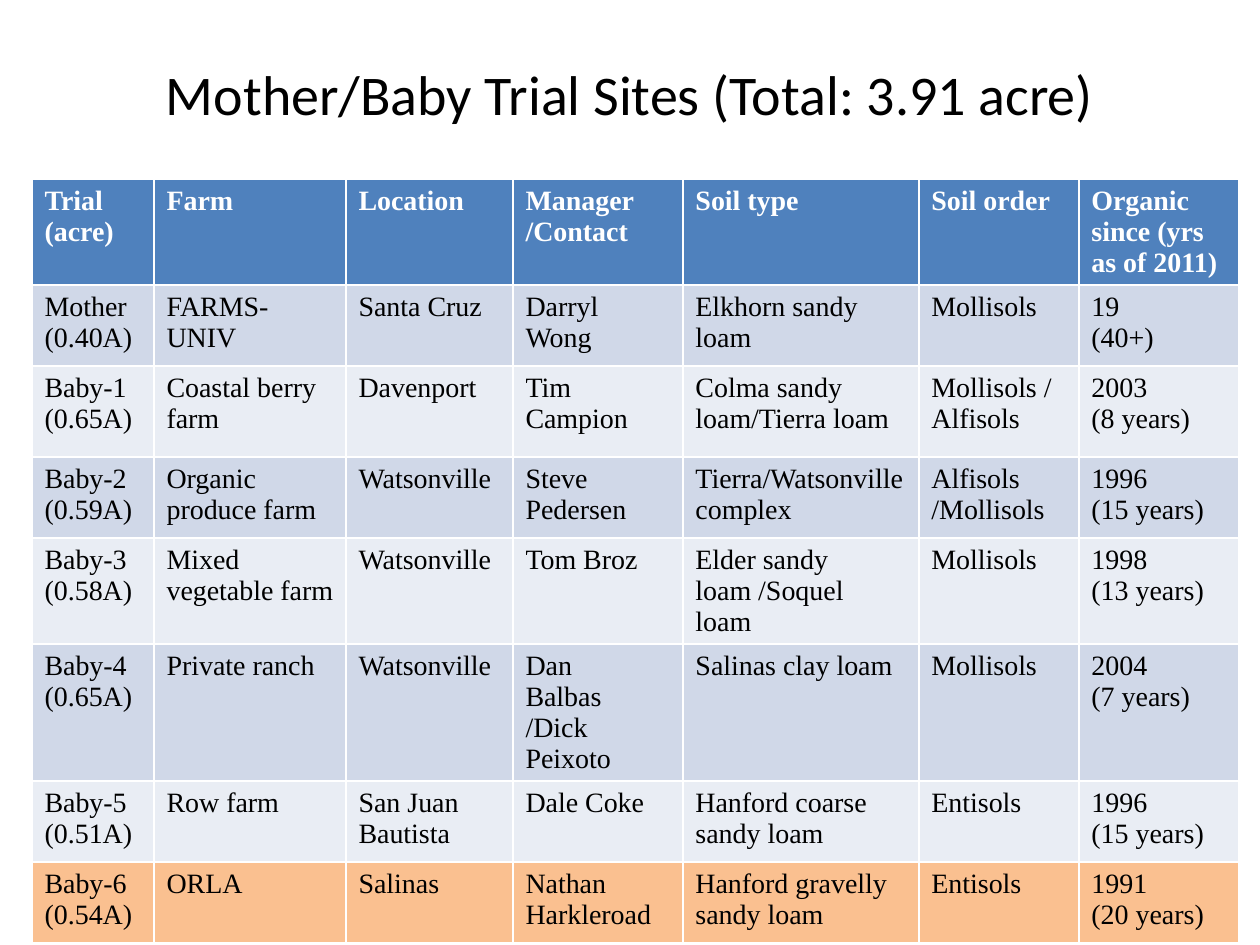
from pptx import Presentation
from pptx.dml.color import RGBColor
from pptx.enum.text import MSO_ANCHOR, MSO_AUTO_SIZE, PP_ALIGN
from pptx.util import Pt

MIDDLE = MSO_ANCHOR.MIDDLE
CENTER = PP_ALIGN.CENTER
FIXED = MSO_AUTO_SIZE.NONE

TITLE = "Mother/Baby Trial Sites (Total: 3.91 acre)"
HEAD = ["Trial\n(acre)", "Farm", "Location", "Manager /Contact", "Soil type",
        "Soil order", "Organic since (yrs as of 2011)"]
SITES = [
    ["Mother\n(0.40A)", "FARMS-UNIV", "Santa Cruz", "Darryl Wong",
     "Elkhorn sandy loam", "Mollisols", "19\n(40+)"],
    ["Baby-1\n(0.65A)", "Coastal berry farm", "Davenport", "Tim Campion",
     "Colma sandy loam/Tierra loam", "Mollisols /Alfisols", "2003\n(8 years)"],
    ["Baby-2\n(0.59A)", "Organic produce farm", "Watsonville", "Steve Pedersen",
     "Tierra/Watsonville complex", "Alfisols /Mollisols", "1996\n(15 years)"],
    ["Baby-3\n(0.58A)", "Mixed vegetable farm", "Watsonville", "Tom Broz",
     "Elder sandy loam /Soquel loam", "Mollisols", "1998\n(13 years)"],
    ["Baby-4\n(0.65A)", "Private ranch", "Watsonville", "Dan Balbas /Dick Peixoto",
     "Salinas clay loam", "Mollisols", "2004\n(7 years)"],
    ["Baby-5\n(0.51A)", "Row farm", "San Juan Bautista", "Dale Coke",
     "Hanford coarse sandy loam", "Entisols", "1996\n(15 years)"],
    ["Baby-6\n(0.54A)", "ORLA", "Salinas", "Nathan Harkleroad",
     "Hanford gravelly sandy loam", "Entisols", "1991\n(20 years)"],
]
COLORS = {"head": "4F81BD", "odd": "D0D8E8", "even": "E9EDF4",
          "last": "FAC090", "white": "FFFFFF", "black": "000000"}
WIDTHS = [122, 192, 167, 170, 236, 160, 160]
HEIGHTS = [81, 81, 91, 81, 81, 81, 81, 81]
LEFT, TOP = 32, 179


def px(n):
    return round(n * 914400 / 126)


def rgb(key):
    return RGBColor.from_string(COLORS[key])


def write(para, text, size, face, color, bold=False):
    run = para.add_run()
    run.text = text
    font = run.font
    font.size, font.name, font.bold = Pt(size), face, bold
    font.color.rgb = rgb(color)


def add_title(slide):
    title = slide.shapes.title
    title.left, title.top = px(0), px(53)
    title.width, title.height = px(1260), px(81)
    frame = title.text_frame
    frame.auto_size = FIXED
    frame.word_wrap = True
    frame.vertical_anchor = MIDDLE
    para = frame.paragraphs[0]
    para.alignment = CENTER
    write(para, TITLE, 32, "Calibri", "black")


def fill_cell(cell, text, back, is_head):
    cell.fill.solid()
    cell.fill.fore_color.rgb = rgb(back)
    frame = cell.text_frame
    for i, line in enumerate(text.split("\n")):
        para = frame.add_paragraph() if i else frame.paragraphs[0]
        write(para, line, 16, "Times New Roman",
              "white" if is_head else "black", is_head)


def add_sites(slide):
    rows = [HEAD] + SITES
    table = slide.shapes.add_table(
        len(rows), len(HEAD), px(LEFT), px(TOP),
        px(sum(WIDTHS)), px(sum(HEIGHTS))).table
    for col, width in zip(table.columns, WIDTHS):
        col.width = px(width)
    for r, texts in enumerate(rows):
        table.rows[r].height = px(HEIGHTS[r])
        back = "odd" if r % 2 else "even"
        if r == 0:
            back = "head"
        elif r == len(SITES):
            back = "last"
        for c, text in enumerate(texts):
            fill_cell(table.cell(r, c), text, back, r == 0)


def main():
    deck = Presentation()
    deck.slide_width, deck.slide_height = px(1260), px(945)
    slide = deck.slides.add_slide(deck.slide_layouts[5])
    add_title(slide)
    add_sites(slide)
    deck.save("out.pptx")


if __name__ == "__main__":
    main()
